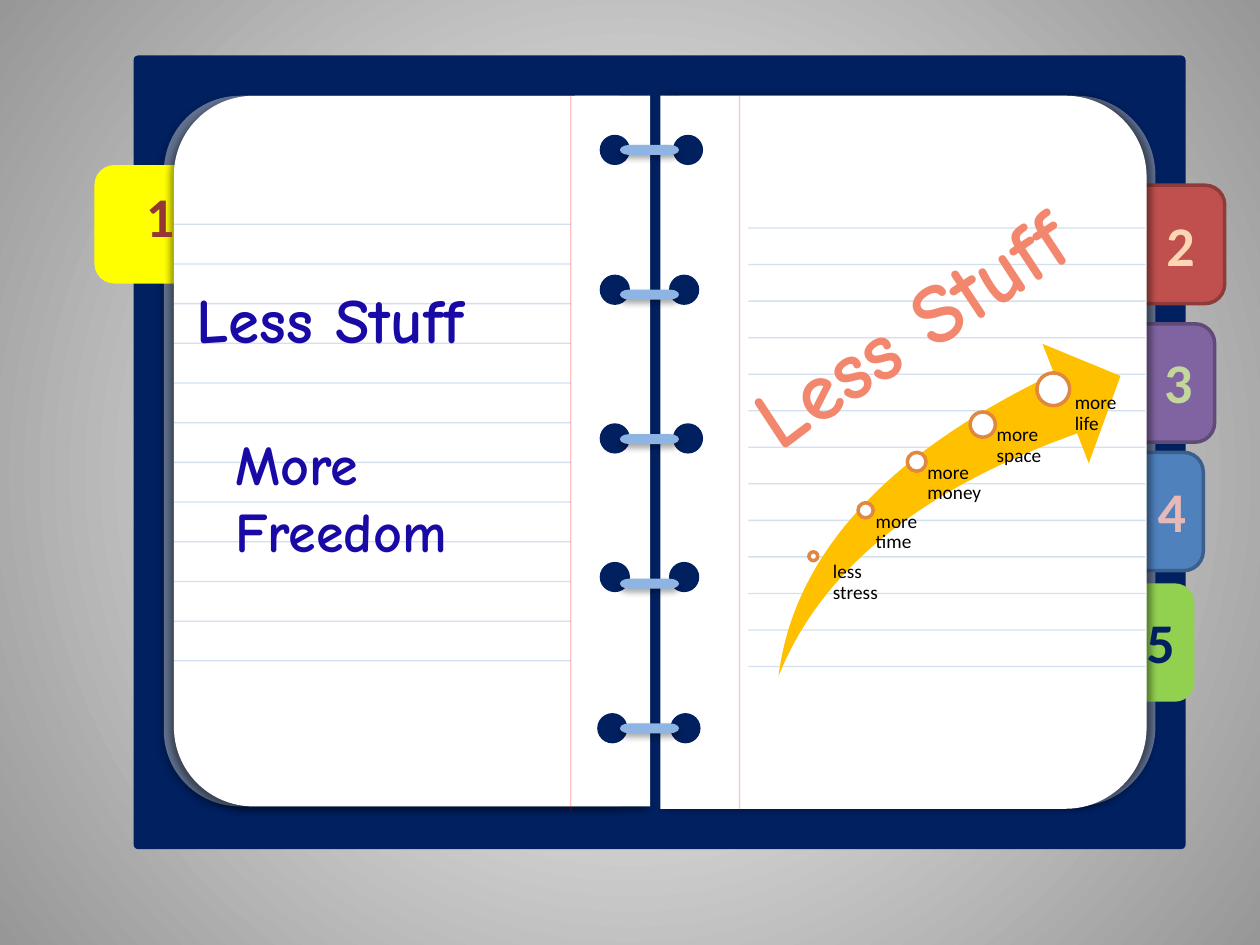
from typing import NamedTuple, Optional

from lxml import etree
from pptx import Presentation
from pptx.dml.color import RGBColor
from pptx.enum.shapes import MSO_CONNECTOR, MSO_SHAPE
from pptx.enum.text import MSO_ANCHOR, MSO_AUTO_SIZE
from pptx.oxml.ns import qn
from pptx.util import Inches, Pt

ROUND_RECT = MSO_SHAPE.ROUNDED_RECTANGLE
ROUND_TOP = MSO_SHAPE.ROUND_2_SAME_RECTANGLE
HOLE = MSO_SHAPE.FLOWCHART_CONNECTOR
CLIP = MSO_SHAPE.FLOWCHART_TERMINATOR
SWOOSH = MSO_SHAPE.SWOOSH_ARROW
OVAL = MSO_SHAPE.OVAL
STRAIGHT = MSO_CONNECTOR.STRAIGHT
TOP = MSO_ANCHOR.TOP
FIT_SHAPE = MSO_AUTO_SIZE.SHAPE_TO_FIT_TEXT
NO_FIT = MSO_AUTO_SIZE.NONE

WHITE = RGBColor(0xFF, 0xFF, 0xFF)
BLACK = RGBColor(0x00, 0x00, 0x00)
GREY = RGBColor(0x97, 0x97, 0x97)
PAGE_EDGE = RGBColor(0xD9, 0xD9, 0xD9)
NAVY = RGBColor(0x00, 0x20, 0x60)
YELLOW = RGBColor(0xFF, 0xFF, 0x00)
GREEN = RGBColor(0x92, 0xD0, 0x50)
RED = RGBColor(0xC0, 0x50, 0x4D)
DARK_RED = RGBColor(0x8E, 0x3B, 0x39)
PURPLE = RGBColor(0x80, 0x64, 0xA2)
DARK_PURPLE = RGBColor(0x5F, 0x4A, 0x78)
BLUE = RGBColor(0x4F, 0x81, 0xBD)
DARK_BLUE = RGBColor(0x3A, 0x5F, 0x8C)
CLIP_BLUE = RGBColor(0x8E, 0xB4, 0xE3)
MARGIN_RED = RGBColor(0xFF, 0x00, 0x00)
RULE_BLUE = RGBColor(0x4B, 0x7E, 0xBC)
INK = RGBColor(0x19, 0x0A, 0xA6)
CORAL = RGBColor(0xF2, 0x87, 0x6E)
GOLD = RGBColor(0xFF, 0xC0, 0x00)
ORANGE = RGBColor(0xE0, 0x88, 0x40)
PEACH = RGBColor(0xFC, 0xD5, 0xB5)
LIME = RGBColor(0xC3, 0xD6, 0x9B)
PINK = RGBColor(0xE6, 0xB9, 0xB8)
MAROON = RGBColor(0x95, 0x37, 0x35)

BODY_FONT = "Calibri"
HAND_FONT = "Comic Neue"


class Shadow(NamedTuple):
    opacity: int
    blur: float
    distance: float
    angle: int


class Tab(NamedTuple):
    left: float
    top: float
    rotation: int
    fill: RGBColor
    line: Optional[RGBColor] = None


class TabNumber(NamedTuple):
    text: str
    left: float
    top: float
    color: RGBColor


class Milestone(NamedTuple):
    text: str
    dot: tuple
    size: float
    box: tuple
    inset: float


LEFT_SHADOW = Shadow(40, 4, 3, 135)
RIGHT_SHADOW = Shadow(40, 4, 3, 0)
CLIP_SHADOW = Shadow(32, 3.5, 2.2, 90)

YELLOW_TAB = Tab(0.75, 1.31, 270, YELLOW)
RIGHT_TABS = [
    Tab(8.54, 4.63, 90, GREEN),
    Tab(8.78, 1.47, 90, RED, DARK_RED),
    Tab(8.70, 2.57, 90, PURPLE, DARK_PURPLE),
    Tab(8.61, 3.59, 90, BLUE, DARK_BLUE),
]
TAB_NUMBERS = [
    TabNumber("2", 9.16, 1.62, PEACH),
    TabNumber("3", 9.14, 2.71, LIME),
    TabNumber("4", 9.09, 3.73, PINK),
    TabNumber("5", 9.00, 4.77, NAVY),
    TabNumber("1", 1.06, 1.39, MAROON),
]
HOLE_ROWS = [(4.76, 5.34, 1.07), (4.76, 5.31, 2.18), (4.76, 5.34, 3.36),
             (4.76, 5.31, 4.46), (4.74, 5.32, 5.66)]
MILESTONES = [
    Milestone("less stress", (6.42, 4.38), 0.07, (6.57, 4.46, 0.42, 0.48), 0.04),
    Milestone("more time", (6.81, 3.99), 0.12, (6.89, 4.06, 0.54, 0.85), 0.06),
    Milestone("more money", (7.20, 3.59), 0.15, (7.28, 3.67, 0.62, 1.13), 0.08),
    Milestone("more space", (7.70, 3.27), 0.20, (7.80, 3.37, 0.65, 1.35), 0.11),
    Milestone("more life", (8.23, 2.96), 0.26, (8.39, 3.12, 0.65, 1.49), 0.14),
]


def set_opacity(element, percent: int) -> None:
    color = element.find(".//" + qn("a:srgbClr"))
    etree.SubElement(color, qn("a:alpha"), val=str(percent * 1000))


def add_shadow(sp, shadow: Shadow) -> None:
    effects = sp._element.spPr.find(qn("a:effectLst"))
    outer = etree.SubElement(
        effects, qn("a:outerShdw"), blurRad=str(Pt(shadow.blur)),
        dist=str(Pt(shadow.distance)), dir=str(shadow.angle * 60000), rotWithShape="0")
    etree.SubElement(outer, qn("a:srgbClr"), val=str(BLACK))
    set_opacity(outer, shadow.opacity)


def add_box(shapes, kind, box: tuple, fill: RGBColor, line: Optional[RGBColor] = None,
            rotation: float = 0, adjust: tuple = (), opacity: int = 100,
            shadow: Optional[Shadow] = None) -> None:
    """Draw a preset shape; box is left, top, width, height in inches."""
    sp = shapes.add_shape(kind, *map(Inches, box))
    sp.rotation = rotation
    for i, value in enumerate(adjust):
        sp.adjustments[i] = value
    sp.fill.solid()
    sp.fill.fore_color.rgb = fill
    if opacity < 100:
        set_opacity(sp._element.spPr, opacity)
    if line is None:
        sp.line.fill.background()
    else:
        sp.line.color.rgb = line
        sp.line.width = Pt(2)
    sp.shadow.inherit = False
    if shadow:
        add_shadow(sp, shadow)


def add_tab(shapes, tab: Tab) -> None:
    add_box(shapes, ROUND_TOP, (tab.left, tab.top, 0.94, 0.94), tab.fill, tab.line, tab.rotation)


def add_page(shapes, box: tuple, rotation: int, fill: RGBColor, shadow: Shadow,
             opacity: int = 100) -> None:
    add_box(shapes, ROUND_TOP, box, fill, rotation=rotation, adjust=(0.167, 0),
            opacity=opacity, shadow=shadow)


def add_rule(shapes, x1: float, y1: float, x2: float, y2: float, color: RGBColor) -> None:
    line = shapes.add_connector(STRAIGHT, Inches(x1), Inches(y1), Inches(x2), Inches(y2))
    line.line.color.rgb = color
    line.line.width = Pt(0.75)
    set_opacity(line._element.spPr, 23)
    etree.SubElement(line._element.spPr, qn("a:effectLst"))


def add_text(shapes, text: str, box: tuple, size: float, color: RGBColor,
             font: str = BODY_FONT, bold: bool = True, rotation: float = 0,
             inset: Optional[float] = None, spacing: Optional[float] = None) -> None:
    """Write one paragraph; an inset sets the left margin and clears the others."""
    sp = shapes.add_textbox(*map(Inches, box))
    sp.rotation = rotation
    tf = sp.text_frame
    tf.word_wrap = True
    tf.vertical_anchor = TOP
    tf.auto_size = FIT_SHAPE if inset is None else NO_FIT
    if inset is not None:
        tf.margin_left = Inches(inset)
        tf.margin_top = tf.margin_right = tf.margin_bottom = 0
    p = tf.paragraphs[0]
    p.line_spacing = spacing
    r = p.add_run()
    r.text = text
    r.font.name = font
    r.font.size = Pt(size)
    r.font.bold = bold
    r.font.color.rgb = color


def set_background(slide) -> None:
    """Fill the background with a circular gradient, white at the centre."""
    fill = slide.background.fill
    fill.gradient()
    for stop, position, color in zip(fill.gradient_stops, (0, 1), (WHITE, GREY)):
        stop.position = position
        stop.color.rgb = color
    grad = slide._element.find(".//" + qn("a:gradFill"))
    grad.remove(grad.find(qn("a:lin")))
    circle = etree.SubElement(grad, qn("a:path"), path="circle")
    etree.SubElement(circle, qn("a:fillToRect"), l="50000", t="50000", r="50000", b="50000")


def draw_notebook(shapes) -> None:
    add_box(shapes, ROUND_RECT, (1.06, 0.44, 8.35, 6.3), NAVY, adjust=(0.006,))
    add_page(shapes, (0.29, 1.77, 5.64, 3.62), 270, PAGE_EDGE, LEFT_SHADOW, 45)
    add_tab(shapes, YELLOW_TAB)
    add_page(shapes, (4.46, 1.69, 5.64, 3.78), 90, PAGE_EDGE, LEFT_SHADOW, 45)
    for tab in RIGHT_TABS:
        add_tab(shapes, tab)
    add_page(shapes, (0.45, 1.69, 5.64, 3.78), 270, WHITE, LEFT_SHADOW)
    add_page(shapes, (4.34, 1.66, 5.66, 3.86), 90, WHITE, RIGHT_SHADOW)
    for left, right, top in HOLE_ROWS:
        for x in (left, right):
            add_box(shapes, HOLE, (x, top, 0.24, 0.24), NAVY)
    for i in range(len(HOLE_ROWS)):
        add_box(shapes, CLIP, (4.92, 1.15 + i * 4.59 / 4, 0.47, 0.08), CLIP_BLUE,
                shadow=CLIP_SHADOW)
    for x in (4.53, 5.87):
        add_rule(shapes, x, 0.76, x, 6.43, MARGIN_RED)
    for left, top, gap, count in ((1.38, 1.78, 0.315, 12), (5.94, 1.81, 0.29, 13)):
        for i in range(count):
            y = top + i * gap
            add_rule(shapes, left, y, left + 3.15, y, RULE_BLUE)


def draw_arrow(shapes) -> None:
    add_box(shapes, SWOOSH, (5.87, 2.97, 3.23, 2.02), GOLD, rotation=345.3, adjust=(0.25, 0.25))
    for m in MILESTONES:
        add_box(shapes, OVAL, (*m.dot, m.size, m.size), WHITE, ORANGE)
        add_text(shapes, m.text, m.box, 11, BLACK, bold=False, inset=m.inset, spacing=0.9)


def main() -> None:
    prs = Presentation()
    prs.slide_width, prs.slide_height = Inches(10), Inches(7.5)
    slide = prs.slides.add_slide(prs.slide_layouts[6])
    shapes = slide.shapes
    set_background(slide)
    draw_notebook(shapes)
    add_text(shapes, "Less Stuff", (1.46, 2.18, 2.6, 0.71), 36, INK, HAND_FONT)
    add_text(shapes, "More Freedom", (1.77, 3.36, 2.95, 0.64), 32, INK, HAND_FONT)
    draw_arrow(shapes.add_group_shape().shapes)
    add_text(shapes, "Less Stuff", (5.71, 1.84, 4.02, 1.21), 48, CORAL, HAND_FONT, rotation=326.6)
    for n in TAB_NUMBERS:
        add_text(shapes, n.text, (n.left, n.top, 0.47, 0.64), 32, n.color)
    prs.save("out.pptx")


if __name__ == "__main__":
    main()
